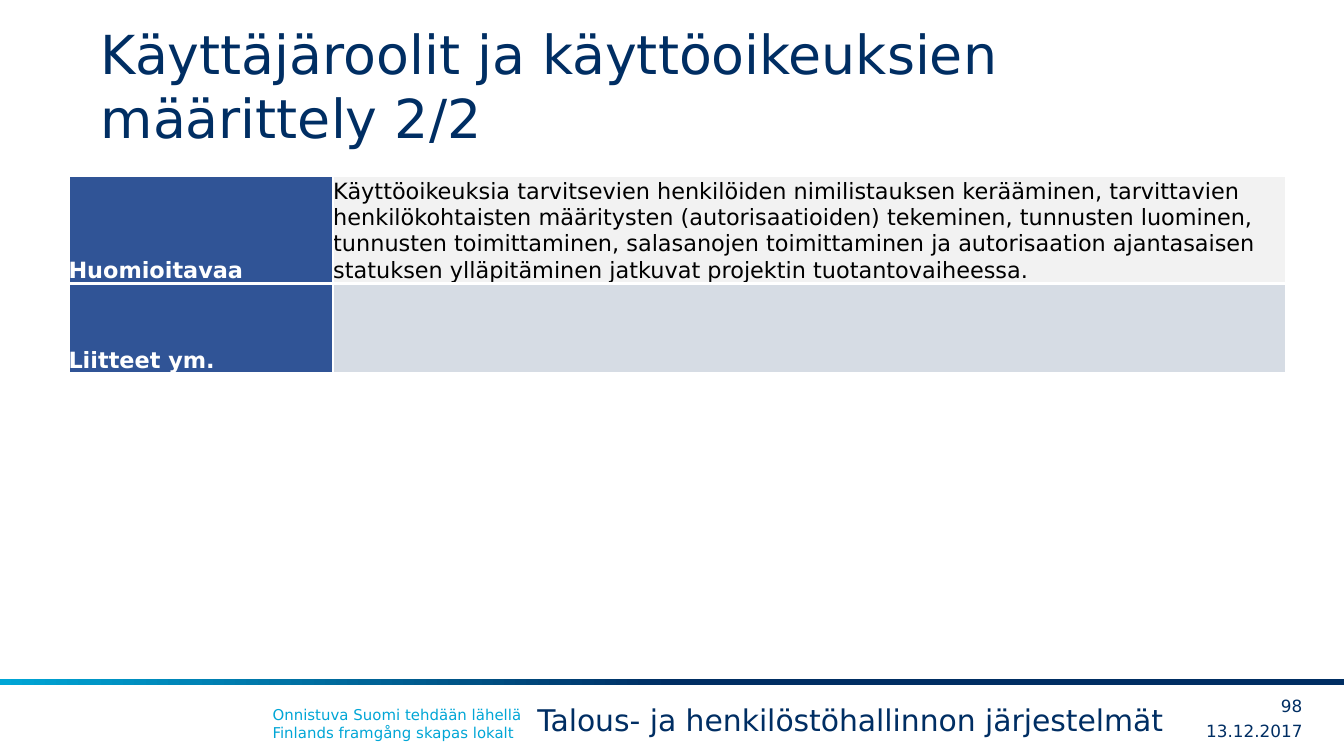
"""Build the slide on user roles and access rights."""
from lxml import etree
from pptx import Presentation, util as u
from pptx.dml.color import RGBColor
from pptx.enum import shapes, text
from pptx.oxml import ns

NAVY = RGBColor(0x00, 0x2E, 0x63)
CYAN = RGBColor(0x00, 0xA6, 0xD6)
BLUE = RGBColor(0x30, 0x54, 0x96)
PALE = RGBColor(0xF2, 0xF2, 0xF2)
GREY = RGBColor(0xD6, 0xDC, 0xE4)
WHITE = RGBColor(0xFF, 0xFF, 0xFF)
BLACK = RGBColor(0x00, 0x00, 0x00)
FONT = "DejaVu Sans"
WIDTH = 10
HEIGHT = WIDTH * 9 / 16

LEFT, RIGHT = text.PP_ALIGN.LEFT, text.PP_ALIGN.RIGHT
TOP, MIDDLE, BOTTOM = (text.MSO_ANCHOR.TOP, text.MSO_ANCHOR.MIDDLE,
                       text.MSO_ANCHOR.BOTTOM)
PADDED, TITLE_INSET, TIGHT = (0.1, 0.05), (0, 0.05), (0, 0)

TEXTS = [
    ("Onnistuva Suomi tehdään lähellä\vFinlands framgång skapas lokalt",
     (1.93, 5.2, 6.54, 0.37), 8, CYAN, LEFT, TOP, PADDED),
    ("13.12.2017", (8.7, 5.33, 0.99, 0.22), 9, NAVY, RIGHT, MIDDLE, TIGHT),
    ("98", (9.26, 5.14, 0.43, 0.22), 9, NAVY, RIGHT, MIDDLE, TIGHT),
    ("Käyttäjäroolit ja käyttöoikeuksien määrittely 2/2",
     (0.75, 0.22, 8.5, 0.94), 28.8, NAVY, LEFT, BOTTOM, TITLE_INSET),
    ("Talous- ja henkilöstöhallinnon järjestelmät",
     (3.9, 5.17, 5, 0.37), 16, NAVY, LEFT, TOP, PADDED),
]

ROWS = [
    ("Huomioitavaa",
     "Käyttöoikeuksia tarvitsevien henkilöiden nimilistauksen kerääminen, "
     "tarvittavien henkilökohtaisten määritysten (autorisaatioiden) tekeminen, "
     "tunnusten luominen, tunnusten toimittaminen, salasanojen toimittaminen "
     "ja autorisaation ajantasaisen statuksen ylläpitäminen jatkuvat projektin "
     "tuotantovaiheessa."),
    ("Liitteet ym.", ""),
]
ROW_FILLS = [PALE, GREY]
TABLE_LEFT, TABLE_TOP = 0.51, 1.31
COLUMN_WIDTHS = [1.97, 7.09]
ROW_HEIGHTS = [0.56, 0.67]


def inches(lengths):
    return [u.Inches(length) for length in lengths]


def style(paragraph, size, color, bold=False):
    paragraph.font.name = FONT
    paragraph.font.size = u.Pt(size)
    paragraph.font.bold = bold
    paragraph.font.color.rgb = color


def add_text(page, words, place, size, color, align, anchor, inset):
    frame = page.shapes.add_textbox(*inches(place)).text_frame
    frame.word_wrap = True
    frame.vertical_anchor = anchor
    frame.margin_left = frame.margin_right = u.Inches(inset[0])
    frame.margin_top = frame.margin_bottom = u.Inches(inset[1])
    frame.text = words
    paragraph = frame.paragraphs[0]
    paragraph.alignment = align
    style(paragraph, size, color)


def add_borders(cell, color, points):
    properties = cell._tc.get_or_add_tcPr()
    for side in ("a:lnL", "a:lnR", "a:lnT", "a:lnB"):
        line = etree.SubElement(properties, ns.qn(side), w=str(u.Pt(points)))
        fill = etree.SubElement(line, ns.qn("a:solidFill"))
        etree.SubElement(fill, ns.qn("a:srgbClr"), val=str(color))


def add_band(page):
    band = page.shapes.add_shape(shapes.MSO_SHAPE.RECTANGLE,
                                 *inches((0, 5.05, WIDTH, 0.05)))
    band.shadow.inherit = False
    band.line.fill.background()
    band.fill.gradient()
    band.fill.gradient_angle = 180
    for stop, (position, color) in zip(band.fill.gradient_stops,
                                       [(0.5, NAVY), (1, CYAN)]):
        stop.position = position
        stop.color.rgb = color


def add_roles_table(page):
    place = (TABLE_LEFT, TABLE_TOP, sum(COLUMN_WIDTHS), sum(ROW_HEIGHTS))
    table = page.shapes.add_table(len(ROWS), len(COLUMN_WIDTHS),
                                  *inches(place)).table
    for column, width in zip(table.columns, inches(COLUMN_WIDTHS)):
        column.width = width
    for row, height, words, row_fill in zip(table.rows, inches(ROW_HEIGHTS),
                                            ROWS, ROW_FILLS):
        row.height = height
        looks = [(BLUE, WHITE, True), (row_fill, BLACK, False)]
        for cell, content, (fill, color, bold) in zip(row.cells, words, looks):
            cell.text = content
            cell.vertical_anchor = BOTTOM
            cell.margin_left = cell.margin_right = 0
            cell.margin_top = cell.margin_bottom = 0
            add_borders(cell, WHITE, 1.5)
            cell.fill.solid()
            cell.fill.fore_color.rgb = fill
            style(cell.text_frame.paragraphs[0], 12, color, bold)


def main():
    deck = Presentation()
    deck.slide_width, deck.slide_height = inches((WIDTH, HEIGHT))
    page = deck.slides.add_slide(deck.slide_layouts[6])
    add_band(page)
    for entry in TEXTS:
        add_text(page, *entry)
    add_roles_table(page)
    deck.save("out.pptx")


if __name__ == "__main__":
    main()
